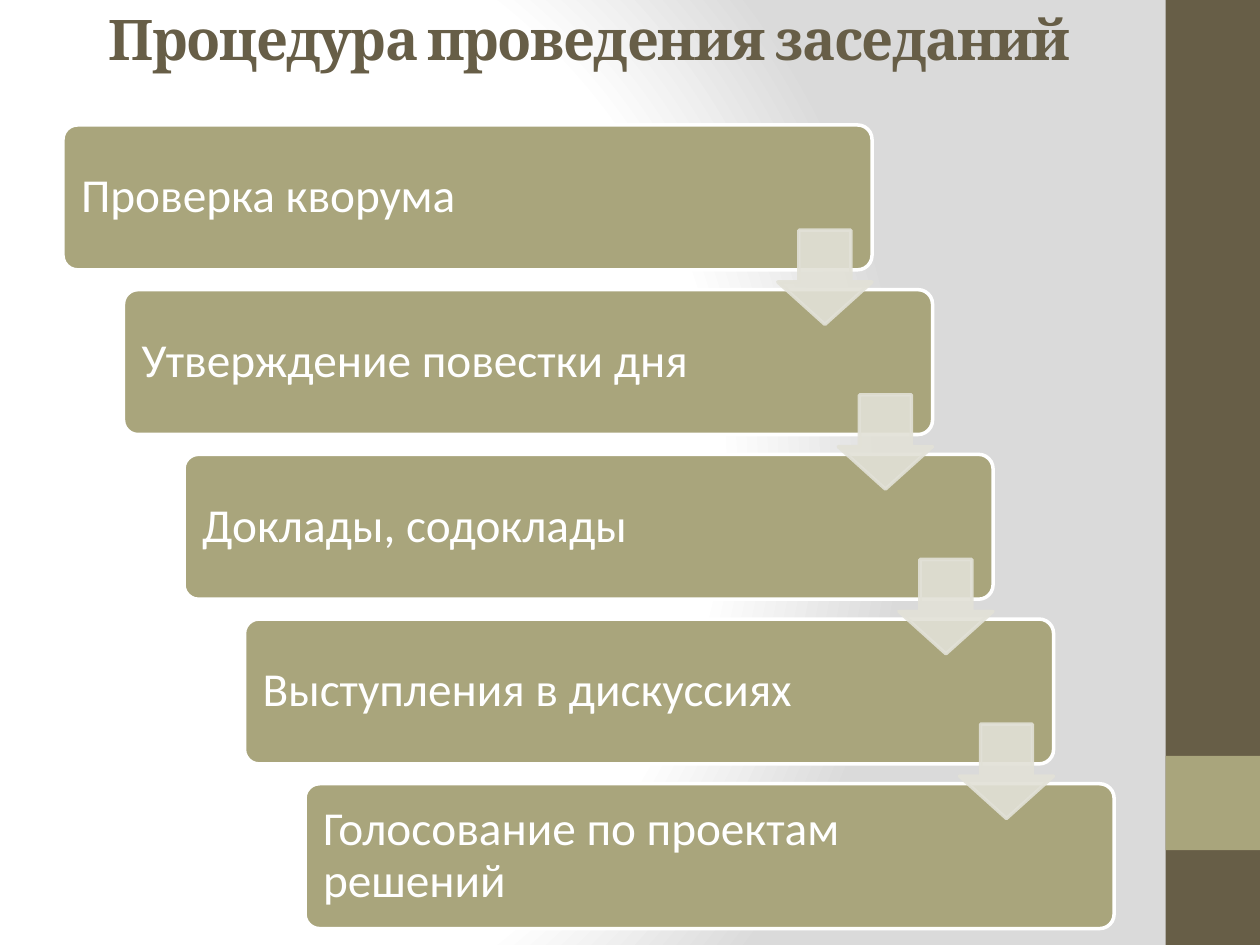
from dataclasses import dataclass

from pptx import Presentation
from pptx.dml.color import RGBColor
from pptx.enum.shapes import MSO_SHAPE as Shape
from pptx.enum.text import MSO_ANCHOR as Anchor, MSO_AUTO_SIZE as AutoSize, PP_ALIGN as Align
from pptx.oxml import parse_xml
from pptx.oxml.ns import nsdecls, qn
from pptx.util import Cm, Pt


@dataclass(frozen=True)
class Theme:
    dark: str = "675E47"
    olive: str = "A9A57C"
    pale: str = "E2E1D7"
    white: str = "FFFFFF"
    grey: str = "DADADA"
    title_font: str = "Cambria"
    body_font: str = "Calibri"
    title_size: int = 32
    body_size: int = 27
    outline: int = 2


THEME = Theme()
TITLE = "Процедура проведения заседаний"
STEPS = [
    "Проверка кворума",
    "Утверждение повестки дня",
    "Доклады, содоклады",
    "Выступления в дискуссиях",
    "Голосование по проектам решений",
]

# Staircase geometry, in centimetres
LEFT, TOP = 1.27, 2.52
SHIFT_X, SHIFT_Y = 1.22, 3.32
STEP_W, STEP_H = 16.31, 2.92
ARROW, ARROW_DROP = 1.9, 2.12


def rgb(color):
    return RGBColor.from_string(color)


def paint_background(slide):
    """Circular gradient, white on the left and grey on the right."""
    slide.background.fill.gradient()
    plain = slide.element.xpath(".//p:bg//a:gradFill")[0]
    stops = "".join(
        f'<a:gs pos="{pos * 1000}"><a:srgbClr val="{color}"/></a:gs>'
        for pos, color in ((0, THEME.white), (75, THEME.white), (100, THEME.grey))
    )
    circle = parse_xml(
        f'<a:gradFill {nsdecls("a")} rotWithShape="1"><a:gsLst>{stops}</a:gsLst>'
        '<a:path path="circle"><a:fillToRect l="20000" t="50000" r="100000" b="50000"/>'
        "</a:path></a:gradFill>"
    )
    plain.getparent().replace(plain, circle)


def add_block(slide, preset, box, fill, line=None):
    block = slide.shapes.add_shape(preset, *map(Cm, box))
    block.shadow.inherit = False
    block.fill.solid()
    block.fill.fore_color.rgb = rgb(fill)
    if line:
        block.line.color.rgb = rgb(line)
        block.line.width = Pt(THEME.outline)
    else:
        block.line.fill.background()
    return block


def style_text(paragraph, font_name, size, color, bold=False):
    for run in paragraph.runs:
        font = run.font
        font.name, font.size, font.bold = font_name, Pt(size), bold
        font.color.rgb = rgb(color)


def set_title(slide):
    title = slide.shapes.title
    title.left, title.top, title.width, title.height = map(Cm, (1.3, 0, 21.16, 1.55))
    frame = title.text_frame
    frame.text = TITLE
    frame.auto_size = AutoSize.NONE
    frame.vertical_anchor = Anchor.MIDDLE
    heading = frame.paragraphs[0]
    heading.alignment = Align.CENTER
    style_text(heading, THEME.title_font, THEME.title_size, THEME.dark, bold=True)
    # Tighten the letters by one point
    heading.runs[0].font._element.set("spc", "-100")


def add_step(slide, index, label):
    box = (LEFT + index * SHIFT_X, TOP + index * SHIFT_Y, STEP_W, STEP_H)
    step = add_block(slide, Shape.ROUNDED_RECTANGLE, box, THEME.olive, THEME.white)
    step.adjustments[0] = 0.1
    frame = step.text_frame
    frame.text = label
    frame.word_wrap = True
    frame.vertical_anchor = Anchor.MIDDLE
    frame.margin_left = frame.margin_top = frame.margin_bottom = Cm(0.28)
    frame.margin_right = Cm(3.43)  # keeps the text clear of the arrow
    caption = frame.paragraphs[0]
    caption.alignment = Align.LEFT
    caption.line_spacing = 0.9
    style_text(caption, THEME.body_font, THEME.body_size, THEME.white)


def add_arrow(slide, index):
    """Arrow at the right edge of a step, pointing to the next one."""
    box = (
        LEFT + index * SHIFT_X + STEP_W - ARROW,
        TOP + index * SHIFT_Y + ARROW_DROP,
        ARROW,
        ARROW,
    )
    arrow = add_block(slide, Shape.DOWN_ARROW, box, THEME.pale, THEME.pale)
    arrow.adjustments[0], arrow.adjustments[1] = 0.55, 0.45
    # Fill and outline are 90% opaque
    for color in arrow.element.spPr.iter(qn("a:srgbClr")):
        color.append(parse_xml(f'<a:alpha {nsdecls("a")} val="90000"/>'))


def main():
    prs = Presentation()
    prs.slide_width, prs.slide_height = Cm(25.4), Cm(19.05)
    slide = prs.slides.add_slide(prs.slide_layouts[5])
    paint_background(slide)

    # Side band with its accent
    add_block(slide, Shape.RECTANGLE, (23.5, 0, 1.9, 19.05), THEME.dark)
    add_block(slide, Shape.RECTANGLE, (23.5, 15.24, 1.9, 1.9), THEME.olive)

    set_title(slide)

    # Staircase, with the arrows above all steps
    for index, label in enumerate(STEPS):
        add_step(slide, index, label)
    for index in range(len(STEPS) - 1):
        add_arrow(slide, index)

    prs.save("out.pptx")


if __name__ == "__main__":
    main()
